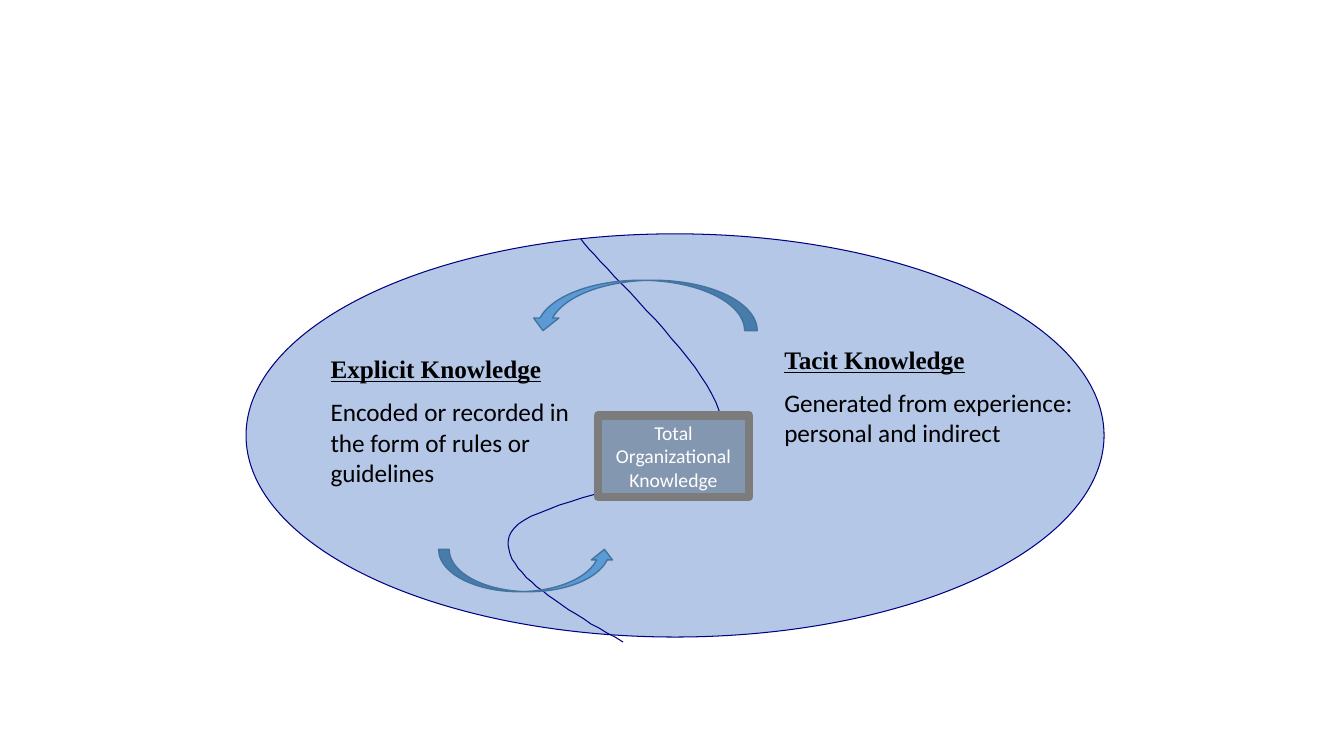
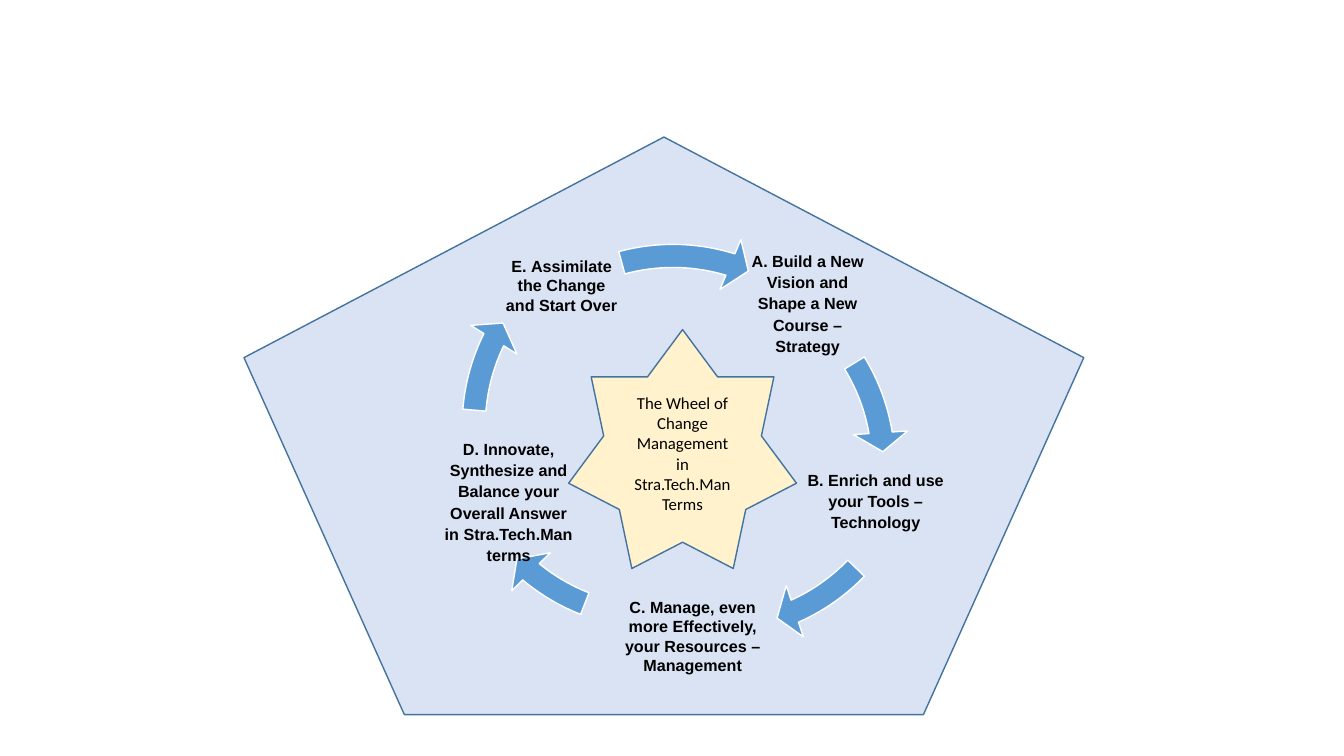
from lxml import etree
from pptx import Presentation
from pptx import util as u
from pptx.dml.color import RGBColor
from pptx.enum import shapes, text

PX = 9144  # EMU in one px, 100 px to the inch
BLACK, WHITE = "000000", "FFFFFF"
NAVY, BLUE, BLUE_EDGE = "000080", "5B9BD5", "43739E"
KIND = shapes.MSO_SHAPE
CENTER = text.PP_ALIGN.CENTER


def draw(shape, fill, line, weight):
    """Give a shape its fill (or None) and outline, without a shadow."""
    shape.shadow.inherit = False
    if fill:
        shape.fill.solid()
        shape.fill.fore_color.rgb = RGBColor.from_string(fill)
    else:
        shape.fill.background()
    shape.line.color.rgb = RGBColor.from_string(line)
    shape.line.width = u.Pt(weight)
    return shape


def write(para, words, font, size, color=BLACK, bold=False, underline=False):
    span = para.add_run()
    span.text = words
    span.font.name = font
    span.font.size = u.Pt(size)
    span.font.color.rgb = RGBColor.from_string(color)
    span.font.bold = bold
    span.font.underline = underline


deck = Presentation()
deck.slide_width, deck.slide_height = 1333 * PX, 750 * PX
blank = deck.slide_layouts[6]

# Slide 1: explicit and tacit knowledge
page = deck.slides.add_slide(blank)
ellipse = page.shapes.add_shape(KIND.OVAL, 244 * PX, 232 * PX, 851 * PX, 400 * PX)
draw(ellipse, "B4C7E7", NAVY, 0.75)

# The divider is a chain of Bezier curves, each sampled in short steps
STEPS = 24
start = (618, 637)
curves = [
    [(554, 600), (490, 563), (507, 528)],
    [(523, 494), (703, 477), (715, 428)],
    [(726, 380), (599, 269), (576, 237)],
]
divider = page.shapes.build_freeform(*start, scale=PX)
for first, second, end in curves:
    points = []
    for step in range(1, STEPS + 1):
        t = step / STEPS
        weights = ((1 - t) ** 3, 3 * t * (1 - t) ** 2, 3 * t * t * (1 - t), t ** 3)
        corners = (start, first, second, end)
        points.append(tuple(sum(w * c[axis] for w, c in zip(weights, corners))
                            for axis in (0, 1)))
    divider.add_line_segments(points, close=False)
    start = end
draw(divider.convert_to_shape(), None, NAVY, 0.75)

knowledge = [
    ("Explicit Knowledge", "Encoded or recorded in the form of rules or guidelines",
     318, 346, 267, 149),
    ("Tacit Knowledge", "Generated from experience: personal and indirect",
     768, 337, 325, 116),
]
for heading, body, left, top, width, height in knowledge:
    box = page.shapes.add_textbox(left * PX, top * PX, width * PX, height * PX)
    frame = box.text_frame
    frame.word_wrap = True
    write(frame.paragraphs[0], heading, "Times New Roman", 18, bold=True, underline=True)
    para = frame.add_paragraph()
    para.space_before = u.Pt(9)
    write(para, body, "Calibri", 18)

total = page.shapes.add_shape(KIND.RECTANGLE, 593 * PX, 412 * PX, 150 * PX, 81 * PX)
draw(total, "8497B0", "7C7C7C", 6)
para = total.text_frame.paragraphs[0]
para.alignment = CENTER
write(para, "Total Organizational Knowledge", "Calibri", 14, WHITE)

for left, top, width, height, turn in [(435, 545, 175, 42, 0), (526, 278, 225, 50, 180)]:
    arrow = page.shapes.add_shape(KIND.CURVED_UP_ARROW, left * PX, top * PX,
                                  width * PX, height * PX)
    arrow.rotation = turn
    draw(arrow, BLUE, BLUE_EDGE, 1)

# Slide 2: the wheel of change management
page = deck.slides.add_slide(blank)
pentagon = page.shapes.add_shape(KIND.REGULAR_PENTAGON, 242 * PX, 136 * PX, 833 * PX, 573 * PX)
draw(pentagon, "DAE3F3", BLUE_EDGE, 1)

# Wording, label left, top, width, indent, line spacing;
# then left, top, start and end angle in degrees of the arrow
wheel = [
    ("Α. Build a New Vision and Shape a New Course – Strategy",
     742, 241, 118, 0, 1.1, 462, 241, 328.44, 350.45),
    ("Β. Enrich and use your Tools – Technology",
     789, 437, 159, 0, 1.1, 489, 209, 43.86, 65.97),
    ("C. Manage, even more Effectively, your Resources – Management",
     579, 572, 178, 38, 1.0, 430, 198, 111.34, 129.76),
    ("D. Innovate, Synthesize and Balance your Overall Answer in Stra.Tech.Man terms",
     398, 438, 175, 38, 1.1, 443, 202, 184.62, 206.21),
    ("Ε. Assimilate the Change and Start Over",
     498, 224, 118, 0, 1.0, 447, 227, 254.8, 287.1),
]
LABEL_HEIGHT, RING, INSET = 118, 441, 2
DEGREE = 0.6  # one degree as an adjustment value
for words, left, top, width, indent, spacing, ring_left, ring_top, tail, head in wheel:
    box = page.shapes.add_textbox(left * PX, top * PX, width * PX, LABEL_HEIGHT * PX)
    frame = box.text_frame
    frame.word_wrap = True
    frame.vertical_anchor = text.MSO_ANCHOR.MIDDLE
    frame.margin_left = (INSET + indent) * PX
    frame.margin_top = frame.margin_right = frame.margin_bottom = INSET * PX
    para = frame.paragraphs[0]
    para.alignment = CENTER
    para.line_spacing = spacing
    write(para, words, "Arial", 11.5, bold=True)

    arrow = page.shapes.add_shape(KIND.CIRCULAR_ARROW, ring_left * PX, ring_top * PX,
                                  RING * PX, RING * PX)
    settings = (0.052, 5.6 * DEGREE, head * DEGREE, tail * DEGREE, 0.061)
    for index, setting in enumerate(settings):
        arrow.adjustments[index] = setting
    draw(arrow, BLUE, WHITE, 1)

star = page.shapes.add_shape(KIND.STAR_7_POINT, 564 * PX, 327 * PX, 226 * PX, 237 * PX)
draw(star, "FFF2CC", BLUE_EDGE, 1)
star.text_frame.margin_top = 25 * PX
para = star.text_frame.paragraphs[0]
para.alignment = CENTER
write(para, "The Wheel of Change Management in Stra.Tech.Man Terms", "Calibri", 12)

deck.save("out.pptx")
